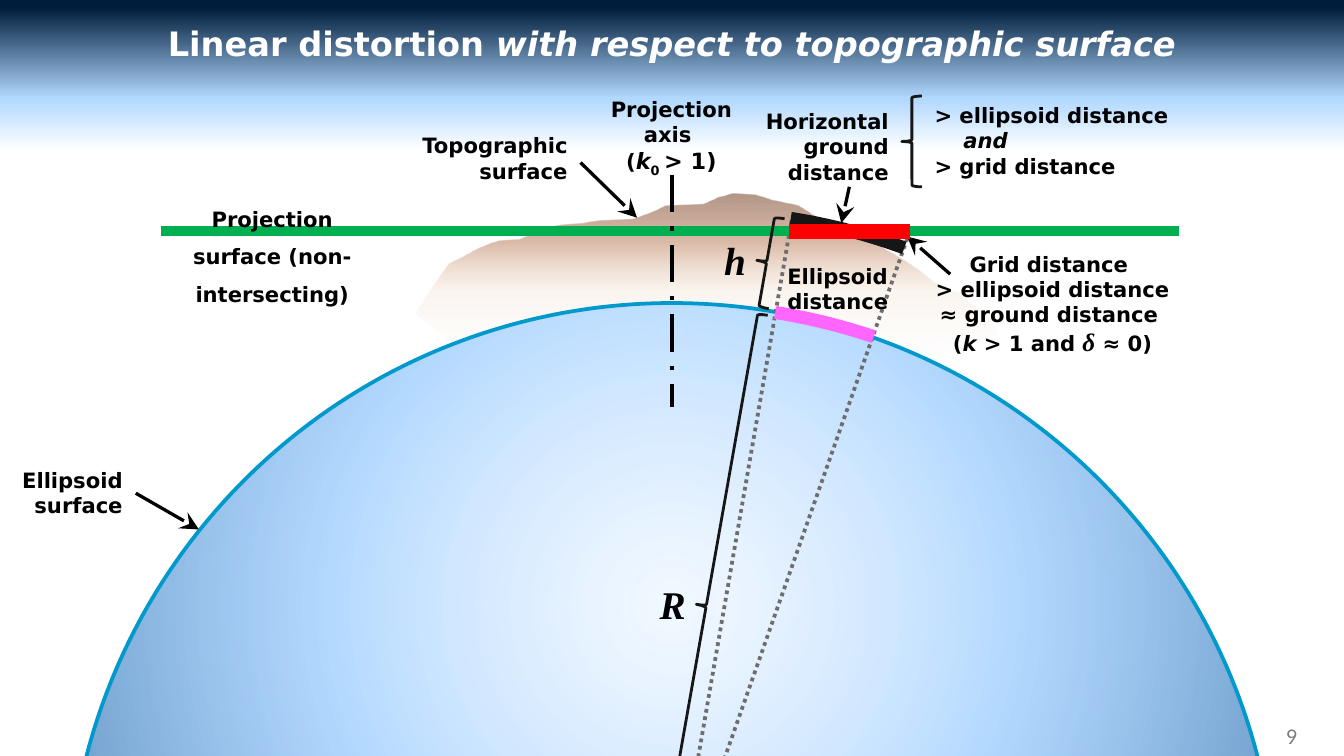
import copy
import dataclasses
import typing

import lxml.etree
import pptx
import pptx.dml.color
import pptx.enum.dml
import pptx.enum.shapes
import pptx.enum.text
import pptx.oxml.ns
import pptx.util

WIDTH = pptx.util.Inches(10)
HEIGHT = WIDTH * 9 // 16
CELL = WIDTH / 100

qn = pptx.oxml.ns.qn
Color = pptx.dml.color.RGBColor
Align = pptx.enum.text.PP_ALIGN
Anchor = pptx.enum.text.MSO_ANCHOR
Dash = pptx.enum.dml.MSO_LINE
Preset = pptx.enum.shapes.MSO_SHAPE
Point = tuple[float, float]
Frame = tuple[float, float, float, float]

BLACK = Color(0x00, 0x00, 0x00)
WHITE = Color(0xFF, 0xFF, 0xFF)
INK = Color(0x16, 0x16, 0x16)
GRAY = Color(0x80, 0x80, 0x80)
DOT_GRAY = Color(0x6D, 0x6D, 0x6D)
GREEN = Color(0x00, 0xB0, 0x50)
RED = Color(0xFF, 0x00, 0x00)
PINK = Color(0xFF, 0x66, 0xFF)
RIM_BLUE = Color(0x00, 0x99, 0xCC)
SKY_BLUE = Color(0xB1, 0xD8, 0xFF)
NAVY = Color(0x00, 0x1D, 0x3B)
PALE_BLUE = Color(0xC2, 0xE0, 0xFF)
MID_BLUE = Color(0x47, 0xA3, 0xFF)
DEEP_BLUE = Color(0x00, 0x4C, 0x99)
SAND = Color(0xD6, 0xB1, 0x9C)
CLAY = Color(0xD4, 0x9E, 0x6C)
RUST = Color(0xA6, 0x55, 0x28)
EARTH = Color(0x66, 0x30, 0x12)

SANS = "DejaVu Sans"
SERIF = "Times New Roman"


class Stop(typing.NamedTuple):
    position: int
    color: Color
    alpha: int = 100


class Span(typing.NamedTuple):
    words: str
    italic: bool = False
    size: float = 11.25
    typeface: str = SANS
    subscript: bool = False
    bold: bool = True
    color: Color = BLACK


@dataclasses.dataclass
class Line:
    start: Point
    end: Point
    width: float = 1.75
    color: Color = BLACK
    dash: Dash | None = None
    arrow: bool = False


@dataclasses.dataclass
class Outline:
    preset: Preset
    frame: Frame
    rotation: float
    color: Color = INK
    width: float = 1.5
    adjustments: tuple[float, ...] = ()


@dataclasses.dataclass
class Label:
    frame: Frame
    paragraphs: list[list[Span]]
    align: Align = Align.CENTER
    spacing: float = 1.0
    anchor: Anchor = Anchor.TOP
    indents: tuple[float, ...] = ()


def grid(*cells: float) -> list[int]:
    return [round(cell * CELL) for cell in cells]


def set_gradient(owner, fill, stops: list[Stop], circular: bool = False) -> None:
    fill.solid()
    solid = next(owner.iter(qn("a:solidFill")))
    gradient = lxml.etree.Element(qn("a:gradFill"), rotWithShape="1")
    listing = lxml.etree.SubElement(gradient, qn("a:gsLst"))
    for stop in stops:
        mark = lxml.etree.SubElement(listing, qn("a:gs"), pos=str(stop.position * 1000))
        tone = lxml.etree.SubElement(mark, qn("a:srgbClr"), val=str(stop.color))
        if stop.alpha < 100:
            lxml.etree.SubElement(tone, qn("a:alpha"), val=str(stop.alpha * 1000))
    if circular:
        route = lxml.etree.SubElement(gradient, qn("a:path"), path="circle")
        lxml.etree.SubElement(route, qn("a:fillToRect"), dict.fromkeys("ltrb", "50000"))
    else:
        lxml.etree.SubElement(gradient, qn("a:lin"), ang=str(270 * 60000), scaled="0")
    solid.getparent().replace(solid, gradient)


def draw_polygon(page, points: list[Point]):
    corners = [tuple(grid(*point)) for point in points]
    builder = page.shapes.build_freeform(*corners[0], scale=1.0)
    builder.add_line_segments(corners[1:], close=True)
    shape = builder.convert_to_shape()
    shape.shadow.inherit = False
    shape.line.fill.background()
    return shape


def draw_dome(page, center: Point, radius: float):
    x, y = center
    dome = draw_polygon(page, [(x - radius, y), (x, y - radius), (x + radius, y)])
    first, second = list(dome.element.iter(qn("a:lnTo")))
    reach = str(grid(radius)[0])
    half_turn = str(180 * 60000)
    arc = lxml.etree.Element(qn("a:arcTo"), wR=reach, hR=reach, stAng=half_turn, swAng=half_turn)
    first.getparent().replace(first, arc)
    second.getparent().remove(second)
    return dome


def draw_line(page, line: Line) -> None:
    straight = pptx.enum.shapes.MSO_CONNECTOR.STRAIGHT
    connector = page.shapes.add_connector(straight, *grid(*line.start, *line.end))
    connector.line.color.rgb = line.color
    connector.line.width = pptx.util.Pt(line.width)
    if line.dash:
        connector.line.dash_style = line.dash
    properties = connector.element.find(qn("p:spPr"))
    if line.arrow:
        stroke = properties.find(qn("a:ln"))
        lxml.etree.SubElement(stroke, qn("a:tailEnd"), type="stealth", w="lg", len="lg")
    lxml.etree.SubElement(properties, qn("a:effectLst"))


def draw_outline(page, outline: Outline) -> None:
    shape = page.shapes.add_shape(outline.preset, *grid(*outline.frame))
    shape.rotation = outline.rotation
    shape.shadow.inherit = False
    shape.fill.background()
    shape.line.color.rgb = outline.color
    shape.line.width = pptx.util.Pt(outline.width)
    for index, value in enumerate(outline.adjustments):
        shape.adjustments[index] = value


def add_span(para, span: Span) -> None:
    for index, words in enumerate(span.words.split("\n")):
        if index:
            para.add_line_break()
            para._p[-1].append(copy.deepcopy(run.font._element))
        run = para.add_run()
        run.text = words
        run.font.size = pptx.util.Pt(span.size)
        run.font.name = span.typeface
        run.font.bold = span.bold
        run.font.italic = span.italic
        run.font.color.rgb = span.color
        if span.subscript:
            run.font._element.set("baseline", "-25000")


def draw_label(page, label: Label) -> None:
    frame = page.shapes.add_textbox(*grid(*label.frame)).text_frame
    frame.word_wrap = True
    frame.vertical_anchor = label.anchor
    for index, spans in enumerate(label.paragraphs):
        para = frame.add_paragraph() if index else frame.paragraphs[0]
        para.alignment = label.align
        para.line_spacing = label.spacing
        if label.indents:
            para._p.get_or_add_pPr().set("marL", str(grid(label.indents[index])[0]))
        for span in spans:
            add_span(para, span)


TERRAIN = [
    (34.9, 26.5), (30.9, 23.3), (31.7, 22), (32.9, 20.3), (33.4, 19.6), (34.4, 19.1),
    (35.5, 18.5), (36.2, 18.2), (37.1, 17.9), (38.6, 17.8), (39.6, 17.4), (40.8, 16.9),
    (41.8, 16.7), (43.4, 16.6), (44.5, 16.4), (47.1, 16.3), (48.7, 15.7), (49.5, 15.3),
    (52.3, 15.2), (53.4, 14.7), (54.5, 14.4), (56.2, 14.5), (57.5, 14.9), (59.4, 15.3),
    (60.5, 16), (61.5, 16.6), (62.5, 17.1), (63.7, 17.2), (64.4, 17.4), (65.3, 18.2),
    (66.5, 18.9), (67.2, 19.3), (68.4, 20.1), (69.5, 21), (70.8, 21.6), (71.6, 21.8),
    (72, 22.4), (72.9, 23), (73.9, 23.9), (74.2, 24.8), (69.8, 26.5),
]
CENTER = (50, 67.55)
RADIUS = 45
LINES = [
    Line((67.7, 17.2), CENTER, 2, DOT_GRAY, Dash.ROUND_DOT),
    Line((58.9, 16.4), CENTER, 2, DOT_GRAY, Dash.ROUND_DOT),
    Line((12, 17.2), (87.75, 17.2), 5, GREEN),
    Line((50, 13), (50, 30.3), 2.5, BLACK, Dash.LONG_DASH_DOT),
]
OUTLINES = [
    Outline(Preset.ARC, (5.65, 22.7, 90, 90), 9, PINK, 7, (162, 167.77)),
    Outline(Preset.ARC, (6.8, 15.7, 90, 90), 9, INK, 7, (162, 168.68)),
    Outline(Preset.LEFT_BRACE, (67.1, 7.15, 1.5, 6.75), 0),
    Outline(Preset.LEFT_BRACE, (56.3, 16.1, 1.5, 6.8), 10),
    Outline(Preset.LEFT_BRACE, (51.8, 23, 1.5, 44.2), 10),
]
GRID_DISTANCE = Line((58.7, 17.2), (67.7, 17.2), 8, RED)
ARROWS = [
    Line((43.2, 12.1), (47.4, 16.2), arrow=True),
    Line((63.2, 13.9), (62.6, 16.6), arrow=True),
    Line((70.7, 20.4), (67.5, 17.6), arrow=True),
    Line((10.1, 36.7), (14.8, 39.4), arrow=True),
]
LABELS = [
    Label((0, 1.25, 100, 4), [[
        Span("Linear distortion ", size=18, color=WHITE),
        Span("with respect to topographic surface", True, 18, color=WHITE)]]),
    Label((43.4, 6.7, 13.1, 6.8), [[
        Span("Projection\naxis \n("), Span("k", True, 12),
        Span("0 ", size=12, subscript=True), Span("> 1)", size=12)]]),
    Label((11.45, 13.9, 17.6, 9.1), [[Span("Projection surface (non-intersecting)")]],
          spacing=1.5),
    Label((57.6, 19.1, 11, 4.8), [[Span("Ellipsoid distance")]], Align.LEFT),
    Label((29.9, 9.4, 13.3, 4.8), [[Span("Topographic surface")]], Align.RIGHT),
    Label((55.6, 7.6, 11.5, 6.7), [[Span("Horizontal ground distance")]], Align.RIGHT),
    Label((68.55, 7.15, 20.2, 6.7), [
        [Span("> ellipsoid distance")], [Span("and", True)], [Span("> grid distance")]],
        Align.LEFT, indents=(0, 2.15, 0)),
    Label((52.7, 17.1, 4, 4.5), [[Span("h", True, 21, SERIF)]]),
    Label((48.05, 42.7, 4, 4.5), [[Span("R", True, 21, SERIF)]]),
    Label((67.9, 18.2, 20.8, 9), [[
        Span("Grid distance \n> ellipsoid distance\n≈ ground distance \n("),
        Span("k", True), Span(" > 1 and "), Span("δ", True, 13.5, SERIF), Span(" ≈ 0)")]]),
    Label((0, 34.3, 10.1, 4.8), [[Span("Ellipsoid surface")]], Align.RIGHT),
    Label((75, 53.25, 22.5, 3), [[Span("9", False, 12, "Calibri", bold=False, color=GRAY)]],
          Align.RIGHT, anchor=Anchor.MIDDLE),
]


def main() -> None:
    deck = pptx.Presentation()
    deck.slide_width, deck.slide_height = WIDTH, HEIGHT
    page = deck.slides.add_slide(deck.slide_layouts[6])
    set_gradient(page.element, page.background.fill,
                 [Stop(80, WHITE), Stop(87, SKY_BLUE), Stop(99, NAVY)])
    terrain = draw_polygon(page, TERRAIN)
    set_gradient(terrain.element, terrain.fill,
                 [Stop(0, SAND, 0), Stop(40, CLAY, 10), Stop(70, RUST, 40), Stop(100, EARTH, 50)])
    backing = draw_dome(page, CENTER, RADIUS)
    backing.fill.solid()
    backing.fill.fore_color.rgb = WHITE
    ellipsoid = draw_dome(page, CENTER, RADIUS)
    set_gradient(ellipsoid.element, ellipsoid.fill,
                 [Stop(0, PALE_BLUE, 20), Stop(50, MID_BLUE, 40), Stop(100, DEEP_BLUE, 60)], True)
    ellipsoid.line.color.rgb = RIM_BLUE
    ellipsoid.line.width = pptx.util.Pt(2)
    for line in LINES:
        draw_line(page, line)
    for outline in OUTLINES:
        draw_outline(page, outline)
    for line in [*ARROWS, GRID_DISTANCE]:
        draw_line(page, line)
    for label in LABELS:
        draw_label(page, label)
    deck.save("out.pptx")


if __name__ == "__main__":
    main()
